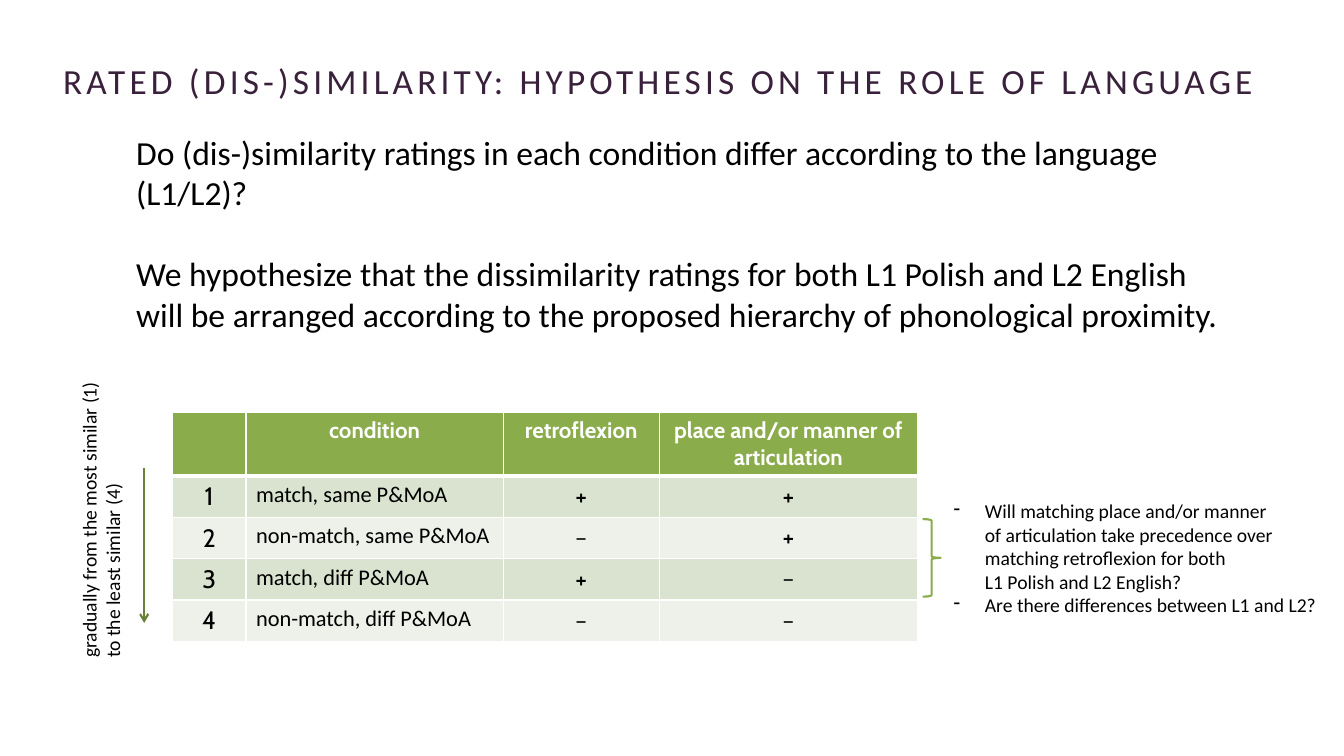
"""Build the slide on rated (dis-)similarity and the role of language."""
from lxml import etree
from pptx import Presentation, util as u
from pptx.dml.color import RGBColor
from pptx.enum import shapes, text
from pptx.oxml import ns

COLORS = {
    "title": "39213B", "text": "000000", "white": "FFFFFF", "green": "8AAC4A",
    "arrow": "688138", "odd": "DAE3D0", "even": "EDF1E9",
}


def add_xml(parent, tag, **attributes):
    return etree.SubElement(parent, ns.qn(tag), attributes)


def style(paragraph, size, color="text", name="Calibri", bold=False):
    paragraph.font.size = u.Pt(size)
    paragraph.font.name = name
    paragraph.font.bold = bold
    paragraph.font.color.rgb = RGBColor.from_string(COLORS[color])


presentation = Presentation()
presentation.slide_width = u.Inches(13.33)
presentation.slide_height = u.Inches(7.5)
slide = presentation.slides.add_slide(presentation.slide_layouts[1])

title = slide.shapes.title
title.left, title.top = u.Inches(0.36), u.Inches(0.43)
title.width, title.height = u.Inches(12.59), u.Inches(0.63)
title.text_frame.text = "RATED (DIS-)SIMILARITY: HYPOTHESIS ON THE ROLE OF LANGUAGE"
title.text_frame.auto_size = text.MSO_AUTO_SIZE.NONE
title.text_frame.vertical_anchor = text.MSO_ANCHOR.BOTTOM
title.text_frame.margin_right = u.Inches(0.34)
paragraph = title.text_frame.paragraphs[0]
paragraph.alignment = text.PP_ALIGN.CENTER
paragraph.line_spacing = 0.9
style(paragraph, 25.2, "title")
paragraph.runs[0].font._element.set("spc", "300")

body = slide.placeholders[1]
body.left, body.top = u.Inches(1.25), u.Inches(1.26)
body.width, body.height = u.Inches(11.14), u.Inches(2.46)
body.text_frame.text = (
    "Do (dis-)similarity ratings in each condition differ according to the language (L1/L2)?\n"
    "We hypothesize that the dissimilarity ratings for both L1 Polish and L2 English "
    "will be arranged according to the proposed hierarchy of phonological proximity."
)
body.text_frame.auto_size = text.MSO_AUTO_SIZE.NONE
for paragraph, space in zip(body.text_frame.paragraphs, (0, 29)):
    style(paragraph, 24)
    paragraph.space_before = u.Pt(space)
    properties = paragraph._p.get_or_add_pPr()
    properties.set("marL", "0")
    properties.set("indent", "0")
    properties.insert_element_before(
        etree.Element(ns.qn("a:buNone")), "a:tabLst", "a:defRPr", "a:extLst")

arrow = slide.shapes.add_connector(
    shapes.MSO_CONNECTOR.STRAIGHT,
    u.Inches(1.43), u.Inches(4.64), u.Inches(1.43), u.Inches(6.18))
arrow.line.color.rgb = RGBColor.from_string(COLORS["arrow"])
arrow.line.width = u.Pt(1.5)
add_xml(arrow.line._get_or_add_ln(), "a:tailEnd", type="arrow")
add_xml(arrow._element.spPr, "a:effectLst")

scale_label = slide.shapes.add_textbox(
    u.Inches(-0.5), u.Inches(4.84), u.Inches(3), u.Inches(0.57))
scale_label.rotation = 270
scale_label.text_frame.word_wrap = False
scale_label.text_frame.text = "gradually from the most similar (1)\nto the least similar (4)"
for paragraph in scale_label.text_frame.paragraphs:
    style(paragraph, 14)

brace = slide.shapes.add_shape(
    shapes.MSO_SHAPE.RIGHT_BRACE,
    u.Inches(9.15), u.Inches(5.15), u.Inches(0.18), u.Inches(0.77))
brace.shadow.inherit = False
brace.fill.background()
brace.line.color.rgb = RGBColor.from_string(COLORS["green"])
brace.line.width = u.Pt(1.5)

questions = slide.shapes.add_textbox(
    u.Inches(9.36), u.Inches(4.9), u.Inches(3.85), u.Inches(1.28))
questions.text_frame.word_wrap = False
questions.text_frame.text = (
    "Will matching place and/or manner\vof articulation take precedence over\v"
    "matching retroflexion for both\vL1 Polish and L2 English?\n"
    "Are there differences between L1 and L2?"
)
for paragraph in questions.text_frame.paragraphs:
    style(paragraph, 14)
    for line_break in paragraph._p.findall(ns.qn("a:br")):
        add_xml(line_break, "a:rPr", sz="1400")
    properties = paragraph._p.get_or_add_pPr()
    properties.set("marL", str(u.Inches(0.31)))
    properties.set("indent", str(-u.Inches(0.31)))
    bullet = etree.Element(ns.qn("a:buChar"), char="-")
    properties.insert_element_before(bullet, "a:tabLst", "a:defRPr", "a:extLst")

rows = [
    ("", "condition", "retroflexion", "place and/or manner of articulation"),
    ("1", "match, same P&MoA", "+", "+"),
    ("2", "non-match, same P&MoA", "–", "+"),
    ("3", "match, diff P&MoA", "+", "–"),
    ("4", "non-match, diff P&MoA", "–", "–"),
]
table = slide.shapes.add_table(
    len(rows), 4, u.Inches(1.71), u.Inches(4.09), u.Inches(7.39), u.Inches(2.26)).table
for column, width in zip(table.columns, (0.73, 2.55, 1.55, 2.56)):
    column.width = u.Inches(width)
for row_index, values in enumerate(rows):
    header = row_index == 0
    table.rows[row_index].height = u.Inches(0.63 if header else 0.41)
    fill = "green" if header else ("even", "odd")[row_index % 2]
    for column_index, value in enumerate(values):
        cell = table.cell(row_index, column_index)
        cell.text = value
        paragraph = cell.text_frame.paragraphs[0]
        condition = column_index == 1 and not header
        if not condition:
            paragraph.alignment = text.PP_ALIGN.CENTER
        if header:
            style(paragraph, 16, "white", "Cabin", True)
        elif condition:
            style(paragraph, 16)
        else:
            style(paragraph, 18, name="Calibri" if value == "–" else "Cabin")
        if column_index == 0 and row_index in (2, 3):
            cell.vertical_anchor = text.MSO_ANCHOR.MIDDLE
        properties = cell._tc.get_or_add_tcPr()
        for side in "LRTB":
            thick = (row_index, side) in ((0, "B"), (1, "T"))
            border = add_xml(properties, f"a:ln{side}", w=str(u.Pt(3 if thick else 1)))
            add_xml(add_xml(border, "a:solidFill"), "a:srgbClr", val=COLORS["white"])
        cell.fill.solid()
        cell.fill.fore_color.rgb = RGBColor.from_string(COLORS[fill])

presentation.save("out.pptx")
